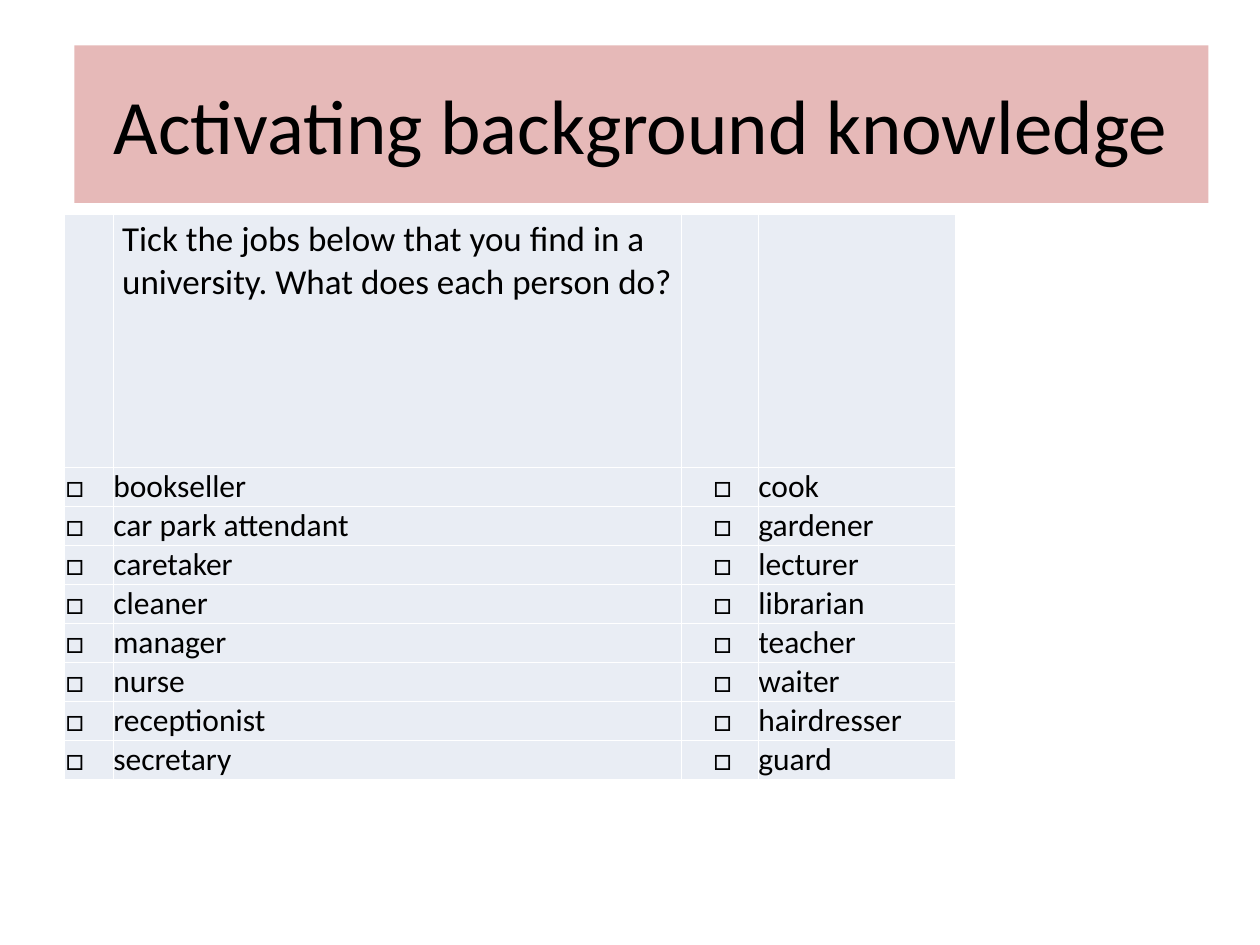
from typing import NamedTuple

from lxml import etree
from pptx import Presentation
from pptx.dml.color import RGBColor
from pptx.enum.shapes import MSO_SHAPE
from pptx.enum.text import MSO_ANCHOR, PP_ALIGN
from pptx.oxml.ns import qn
from pptx.util import Inches, Pt

RECTANGLE = MSO_SHAPE.RECTANGLE
MIDDLE = MSO_ANCHOR.MIDDLE
LEFT, CENTER = PP_ALIGN.LEFT, PP_ALIGN.CENTER

BLACK = RGBColor(0x00, 0x00, 0x00)
WHITE = RGBColor(0xFF, 0xFF, 0xFF)
PINK = RGBColor(0xE6, 0xB9, 0xB8)
PALE_BLUE = RGBColor(0xE9, 0xED, 0xF4)
FONT = "Calibri"
TICK_BOX = "□"

COLUMN_WIDTHS = (0.39, 4.51, 0.61, 1.57)
TICK_INDENTS = (0.01, 0.25)
QUESTION_HEIGHT, JOB_HEIGHT = 2.01, 0.31


class JobPair(NamedTuple):
    first: str
    second: str


JOBS = (
    JobPair("bookseller", "cook"),
    JobPair("car park attendant", "gardener"),
    JobPair("caretaker", "lecturer"),
    JobPair("cleaner", "librarian"),
    JobPair("manager", "teacher"),
    JobPair("nurse", "waiter"),
    JobPair("receptionist", "hairdresser"),
    JobPair("secretary", "guard"),
)


def write(frame, text: str, *, size: float, align=LEFT) -> None:
    paragraph = frame.paragraphs[0]
    paragraph.alignment = align
    run = paragraph.add_run()
    run.text = text
    run.font.name = FONT
    run.font.size = Pt(size)
    run.font.color.rgb = BLACK


def style_cell(cell) -> None:
    """Give a cell thin white borders and a pale fill."""
    properties = cell._tc.get_or_add_tcPr()
    for side in ("a:lnL", "a:lnR", "a:lnT", "a:lnB"):
        border = etree.SubElement(properties, qn(side), w=str(Pt(1)))
        fill = etree.SubElement(border, qn("a:solidFill"))
        etree.SubElement(fill, qn("a:srgbClr"), val=str(WHITE))
    cell.fill.solid()
    cell.fill.fore_color.rgb = PALE_BLUE


def write_cell(cell, text: str, *, size: float = 18, side: float = 0,
               right: float = 0, edge: float = 0) -> None:
    cell.margin_left, cell.margin_right = Inches(side), Inches(right)
    cell.margin_top = cell.margin_bottom = Inches(edge)
    write(cell.text_frame, text, size=size)


def add_title(slide, text: str) -> None:
    banner = slide.shapes.add_shape(
        RECTANGLE, Inches(0.59), Inches(0.36), Inches(9), Inches(1.25))
    banner.shadow.inherit = False
    banner.fill.solid()
    banner.fill.fore_color.rgb = PINK
    banner.line.fill.background()
    banner.text_frame.word_wrap = True
    banner.text_frame.vertical_anchor = MIDDLE
    write(banner.text_frame, text, size=44, align=CENTER)


def add_job_table(slide, question: str, jobs: tuple[JobPair, ...]) -> None:
    heights = [QUESTION_HEIGHT] + [JOB_HEIGHT] * len(jobs)
    table = slide.shapes.add_table(
        len(heights), len(COLUMN_WIDTHS), Inches(0.51), Inches(1.7),
        Inches(sum(COLUMN_WIDTHS)), Inches(sum(heights))).table
    table.first_row = table.horz_banding = False
    for column, width in zip(table.columns, COLUMN_WIDTHS):
        column.width = Inches(width)
    for row, height in zip(table.rows, heights):
        row.height = Inches(height)
    for cell in table.iter_cells():
        style_cell(cell)

    # Question, then a tick box before each job
    write_cell(table.cell(0, 1), question, size=20, side=0.07, right=0.07, edge=0.03)
    for row, pair in enumerate(jobs, start=1):
        for half, (job, indent) in enumerate(zip(pair, TICK_INDENTS)):
            write_cell(table.cell(row, 2 * half), TICK_BOX, side=indent)
            write_cell(table.cell(row, 2 * half + 1), job)


def main() -> None:
    presentation = Presentation()
    presentation.slide_width, presentation.slide_height = Inches(10), Inches(7.5)
    slide = presentation.slides.add_slide(presentation.slide_layouts[6])
    add_title(slide, "Activating background knowledge")
    add_job_table(
        slide,
        "Tick the jobs below that you find in a university. What does each person do?",
        JOBS)
    presentation.save("out.pptx")


if __name__ == "__main__":
    main()
